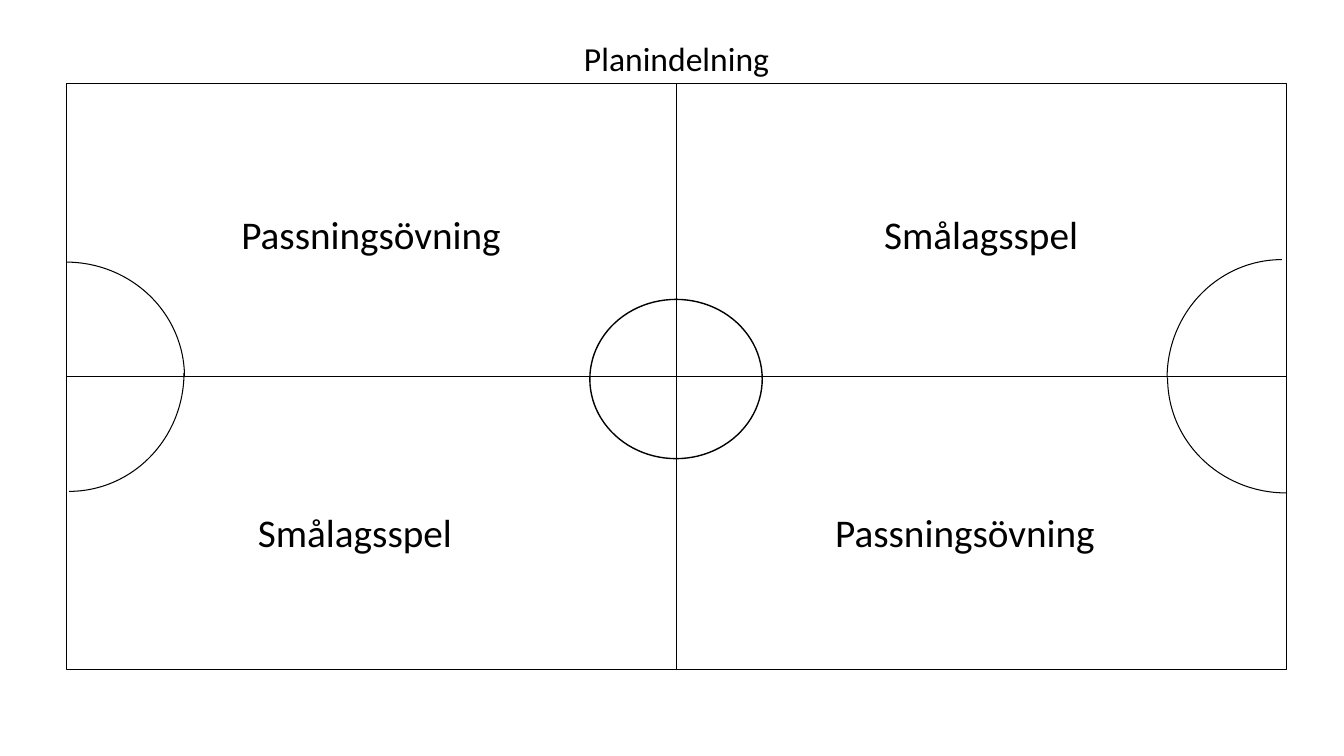
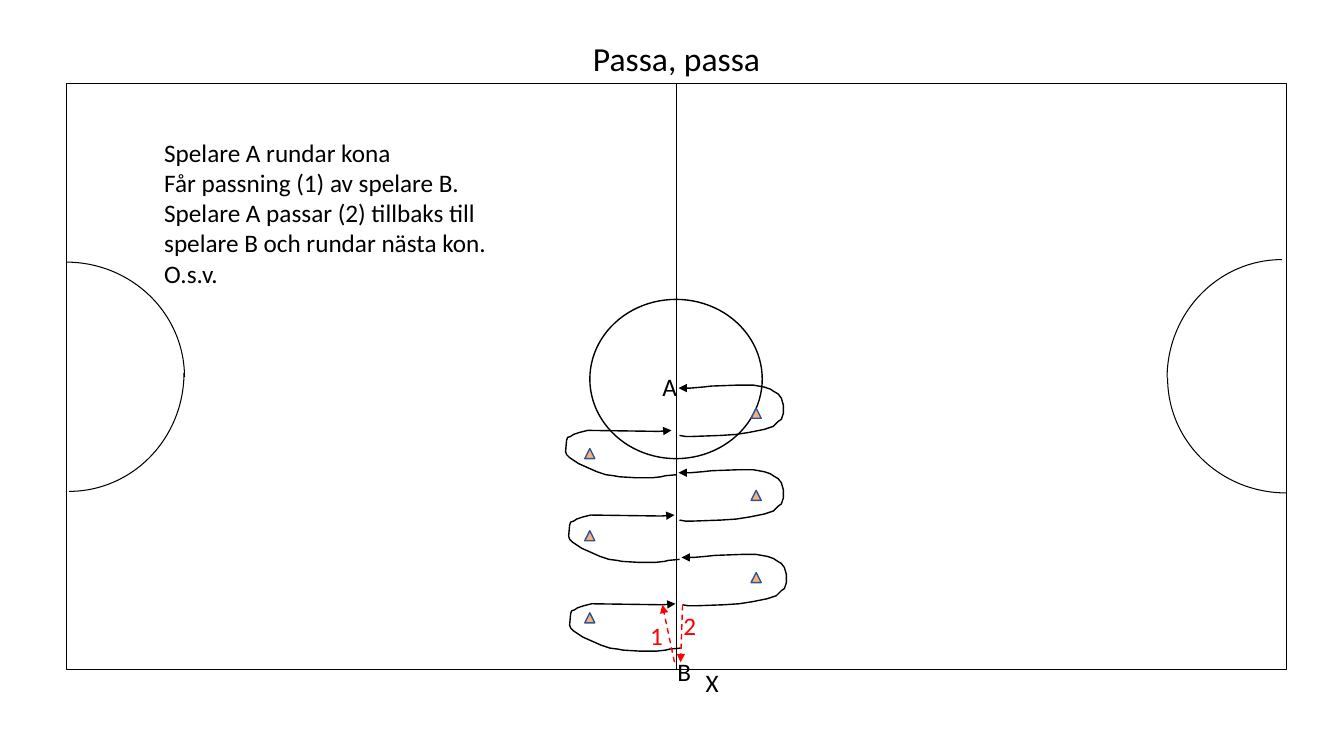
from dataclasses import dataclass

from lxml import etree
from pptx import Presentation
from pptx.dml.color import RGBColor
from pptx.enum.dml import MSO_LINE
from pptx.enum.shapes import MSO_CONNECTOR, MSO_SHAPE
from pptx.enum.text import MSO_ANCHOR, MSO_AUTO_SIZE, PP_ALIGN
from pptx.oxml.ns import qn
from pptx.util import Inches, Pt

STRAIGHT = MSO_CONNECTOR.STRAIGHT
RECTANGLE, OVAL = MSO_SHAPE.RECTANGLE, MSO_SHAPE.OVAL
ARC, TRIANGLE = MSO_SHAPE.ARC, MSO_SHAPE.ISOSCELES_TRIANGLE
DASH = MSO_LINE.DASH
LEFT, CENTER = PP_ALIGN.LEFT, PP_ALIGN.CENTER
TOP = MSO_ANCHOR.TOP
NO_FIT, GROW = MSO_AUTO_SIZE.NONE, MSO_AUTO_SIZE.SHAPE_TO_FIT_TEXT


@dataclass(frozen=True)
class Theme:
    font: str = "Calibri"
    ink: RGBColor = RGBColor(0, 0, 0)
    ball: RGBColor = RGBColor(255, 0, 0)
    cone: RGBColor = RGBColor(0xF4, 0xB1, 0x83)
    cone_edge: RGBColor = RGBColor(0x32, 0x54, 0x91)
    title_size: int = 24
    zone_size: int = 28
    body_size: int = 18


@dataclass(frozen=True)
class Field:
    left: float = 0.66
    top: float = 0.83
    width: float = 12.1
    height: float = 5.81

    def x(self, share):
        return self.left + self.width * share

    def y(self, share):
        return self.top + self.height * share


THEME = Theme()
FIELD = Field()
SLIDE_WIDTH, SLIDE_HEIGHT = 13.33, 7.5
TITLE_AREA = (3.85, 0.33, 5.72, 0.5)
GOAL_ARCS = [(-0.52, 2.6), (-0.49, 2.56), (11.58, 2.61), (11.54, 2.61)]
ZONE_ROWS = [
    (1.6, 2.04, ("Passningsövning", "Smålagsspel")),
    (1.44, 4.99, ("Smålagsspel", "Passningsövning")),
]
INSTRUCTIONS = [
    "Spelare A rundar kona",
    "Får passning (1) av spelare B.",
    "Spelare A passar (2) tillbaks till spelare B och rundar nästa kon.",
    "O.s.v.",
]
CONE_SIZE, CONE_PITCH = 0.1, 0.815
CONE_COLUMNS = [(5.8, 4.45), (7.45, 4.05)]
LEFT_RUN = [
    (6.75, 6.43), (6.64, 6.44), (6.6, 6.45), (6.51, 6.46), (6.35, 6.46),
    (6.18, 6.45), (6.13, 6.44), (6.05, 6.43), (5.96, 6.4), (5.87, 6.36),
    (5.78, 6.32), (5.72, 6.28), (5.69, 6.26), (5.66, 6.23), (5.65, 6.2),
    (5.66, 6.09), (5.67, 6.06), (5.7, 6.05), (5.73, 6.03), (5.79, 6.01),
    (5.87, 5.99), (6.57, 6), (6.7, 5.99),
]
RIGHT_RUN = [
    (6.77, 6), (6.83, 6.01), (6.9, 6.01), (7.18, 6), (7.33, 5.99),
    (7.46, 5.97), (7.61, 5.94), (7.7, 5.91), (7.75, 5.86), (7.78, 5.84),
    (7.8, 5.78), (7.8, 5.7), (7.78, 5.63), (7.75, 5.59), (7.7, 5.56),
    (7.67, 5.54), (7.61, 5.52), (7.5, 5.5), (7.36, 5.5), (7.09, 5.51),
    (7, 5.52), (6.88, 5.53), (6.76, 5.53),
]
RUN_SHIFTS = [
    (LEFT_RUN, [(0, 0), (-0.01, -0.88), (-0.04, -1.72)]),
    (RIGHT_RUN, [(0, 0), (-0.03, -0.84), (-0.03, -1.68)]),
]
PASSES = [((6.69, 6.57), (6.57, 6)), ((6.77, 6), (6.75, 6.57))]
MARKS = [
    ("B", 6.62, 6.46, THEME.ink),
    ("X", 6.9, 6.57, THEME.ink),
    ("A", 6.47, 3.63, THEME.ink),
    ("1", 6.35, 6.11, THEME.ball),
    ("2", 6.68, 6.01, THEME.ball),
]


def set_line(shape, color, width):
    shape.line.color.rgb = color
    shape.line.width = Pt(width)


def add_arrowhead(shape):
    outline = shape.element.spPr.find(qn("a:ln"))
    etree.SubElement(outline, qn("a:tailEnd"), type="triangle")


def write(frame, lines, size, color, align):
    frame.word_wrap = True
    frame.vertical_anchor = TOP
    for index, line in enumerate(lines):
        para = frame.add_paragraph() if index else frame.paragraphs[0]
        para.alignment = align
        span = para.add_run()
        span.text = line
        span.font.name = THEME.font
        span.font.size = Pt(size)
        span.font.color.rgb = color


def add_text(page, area, lines, size=THEME.body_size, color=THEME.ink, align=LEFT):
    box = page.shapes.add_textbox(*map(Inches, area))
    write(box.text_frame, lines, size, color, align)
    box.text_frame.auto_size = GROW


def add_outline(page, kind, area, width, color=THEME.ink, fill=None):
    shape = page.shapes.add_shape(kind, *map(Inches, area))
    shape.shadow.inherit = False
    if fill is None:
        shape.fill.background()
    else:
        shape.fill.solid()
        shape.fill.fore_color.rgb = fill
    set_line(shape, color, width)
    return shape


def add_line(page, start, end, width, color=THEME.ink, dashed_arrow=False):
    line = page.shapes.add_connector(STRAIGHT, *map(Inches, start + end))
    set_line(line, color, width)
    if dashed_arrow:
        line.line.dash_style = DASH
        add_arrowhead(line)
    etree.SubElement(line.element.spPr, qn("a:effectLst"))


def add_run_path(page, points, shift):
    across, down = shift
    places = [(Inches(x + across), Inches(y + down)) for x, y in points]
    builder = page.shapes.build_freeform(*places[0])
    builder.add_line_segments(places[1:], close=False)
    path = builder.convert_to_shape()
    path.shadow.inherit = False
    path.fill.background()
    set_line(path, THEME.ink, 1)
    add_arrowhead(path)


def add_field_page(deck, title):
    page = deck.slides.add_slide(deck.slide_layouts[5])
    heading = page.shapes.title
    heading.left, heading.top, heading.width, heading.height = map(Inches, TITLE_AREA)
    write(heading.text_frame, [title], THEME.title_size, THEME.ink, CENTER)
    heading.text_frame.auto_size = NO_FIT
    add_outline(page, RECTANGLE, (FIELD.left, FIELD.top, FIELD.width, FIELD.height), 1)
    add_line(page, (FIELD.x(0.5), FIELD.y(1)), (FIELD.x(0.5), FIELD.y(0)), 0.75)
    add_outline(page, OVAL, (5.85, 2.97, 1.71, 1.58), 1)
    for turn, (left, top) in enumerate(GOAL_ARCS):
        arc = add_outline(page, ARC, (left, top, 2.35, 2.28), 0.75)
        arc.rotation = 90 * turn
    return page


def build_zones(deck):
    page = add_field_page(deck, "Planindelning")
    add_line(page, (FIELD.x(0), FIELD.y(0.5)), (FIELD.x(1), FIELD.y(0.5)), 0.5)
    for left, top, names in ZONE_ROWS:
        for column, name in enumerate(names):
            area = (left + column * FIELD.width / 2, top, 4.16, 0.57)
            add_text(page, area, [name], THEME.zone_size, align=CENTER)


def build_passing_drill(deck):
    page = add_field_page(deck, "Passa, passa")
    for left, top in CONE_COLUMNS:
        for row in range(3):
            area = (left, top + row * CONE_PITCH, CONE_SIZE, CONE_SIZE)
            add_outline(page, TRIANGLE, area, 1, THEME.cone_edge, THEME.cone)
    for points, shifts in RUN_SHIFTS:
        for shift in shifts:
            add_run_path(page, points, shift)
    for start, end in PASSES:
        add_line(page, start, end, 1, THEME.ball, dashed_arrow=True)
    for mark, left, top, color in MARKS:
        add_text(page, (left, top, 0.32, 0.4), [mark], color=color)
    add_text(page, (1.53, 1.31, 3.98, 1.62), INSTRUCTIONS)


def main():
    deck = Presentation()
    deck.slide_width, deck.slide_height = Inches(SLIDE_WIDTH), Inches(SLIDE_HEIGHT)
    build_zones(deck)
    build_passing_drill(deck)
    deck.save("out.pptx")


if __name__ == "__main__":
    main()
